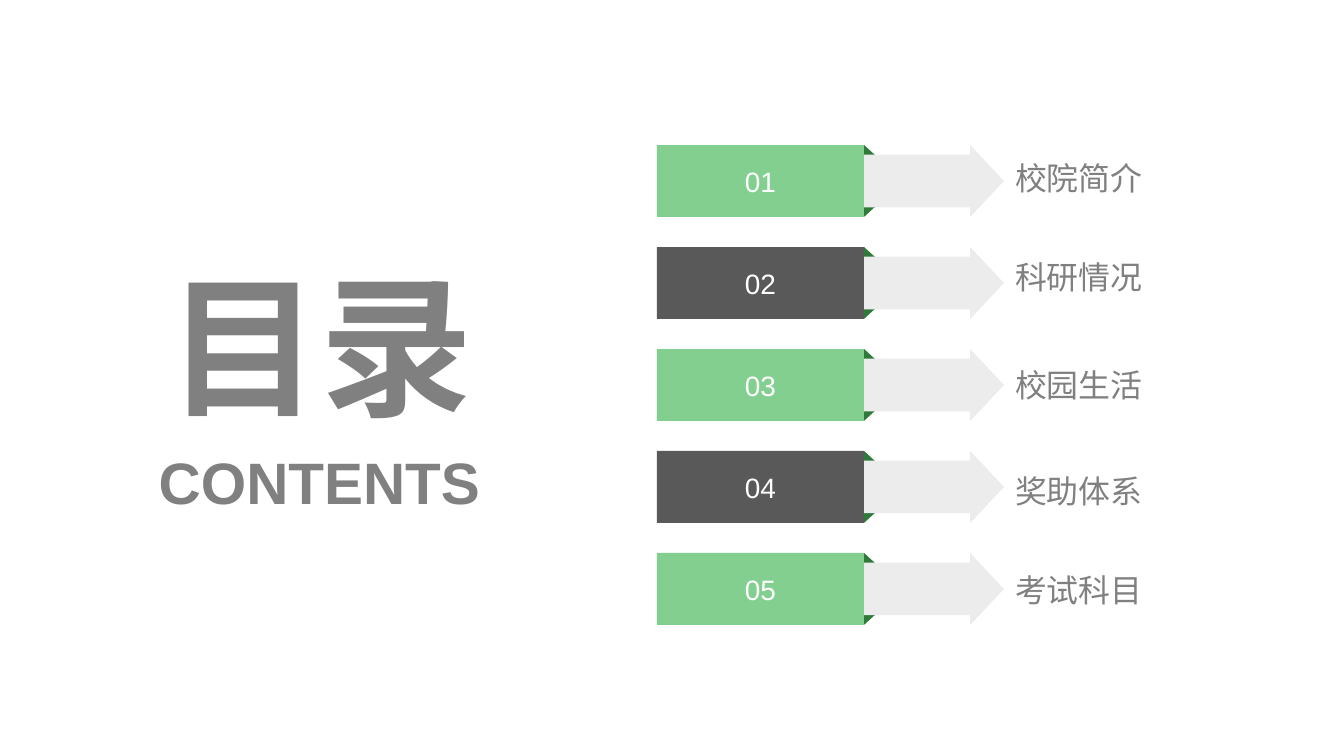
from pptx import Presentation
from pptx.dml.color import RGBColor
from pptx.enum.lang import MSO_LANGUAGE_ID as Lang
from pptx.enum.shapes import MSO_SHAPE as Shape
from pptx.enum.text import MSO_ANCHOR as Anchor, MSO_AUTO_SIZE as Fit, PP_ALIGN as Align
from pptx.oxml.ns import qn
from pptx.util import Pt
from lxml.etree import SubElement

GREEN = RGBColor(0x83, 0xCF, 0x8F)
FOREST = RGBColor(0x2F, 0x7A, 0x3B)
DARK = RGBColor(0x59, 0x59, 0x59)
GREY = RGBColor(0x80, 0x80, 0x80)
PALE = RGBColor(0xEC, 0xEC, 0xEC)
WHITE = RGBColor(0xFF, 0xFF, 0xFF)
FONT = "Arial"

TITLE = "目录"
SUBTITLE = "CONTENTS"
# number, label, top of the label in px
ROWS = [
    ("01", "校院简介", 159),
    ("02", "科研情况", 258),
    ("03", "校园生活", 366),
    ("04", "奖助体系", 472),
    ("05", "考试科目", 571),
]

PX = 9565  # EMU in one px
TOP, STEP, HIGH = 145, 102, 72
BAR_X, BAR_W = 657, 207
FOLD_X, FOLD_W, FOLD_H = BAR_X + BAR_W, 12, 11
ARROW_X, ARROW_W = 772, 232
LABEL_X, LABEL_W, LABEL_H = 1015, 258, 38


def emu(*sizes):
    return [size * PX for size in sizes]


def write(shape, text, size, color, align, anchor=Anchor.MIDDLE, bold=False):
    frame = shape.text_frame
    frame.auto_size = Fit.NONE
    frame.word_wrap = True
    frame.vertical_anchor = anchor
    frame.margin_left = frame.margin_right = 0
    frame.margin_top = frame.margin_bottom = 0
    para = frame.paragraphs[0]
    para.alignment = align
    run = para.add_run()
    run.text = text
    font = run.font
    font.name, font.size, font.bold = FONT, Pt(size), bold
    font.color.rgb = color
    font.language_id = Lang.SIMPLIFIED_CHINESE
    # East Asian glyphs take their font from a separate element
    SubElement(run._r.get_or_add_rPr(), qn("a:ea")).set("typeface", FONT)


def add_solid(slide, kind, box, color):
    shape = slide.shapes.add_shape(kind, *emu(*box))
    shape.shadow.inherit = False
    shape.fill.solid()
    shape.fill.fore_color.rgb = color
    shape.line.fill.background()
    return shape


def add_row(slide, index, number, label, label_y):
    y = TOP + index * STEP
    add_solid(slide, Shape.RIGHT_TRIANGLE, (FOLD_X, y, FOLD_W, FOLD_H), FOREST)
    low = add_solid(slide, Shape.RIGHT_TRIANGLE,
                    (FOLD_X, y + HIGH - FOLD_H, FOLD_W, FOLD_H), FOREST)
    low.element.spPr.get_or_add_xfrm().set("flipV", "1")

    arrow = add_solid(slide, Shape.RIGHT_ARROW, (ARROW_X, y, ARROW_W, HIGH), PALE)
    arrow.adjustments[0] = 0.73
    arrow.adjustments[1] = 0.47

    bar = add_solid(slide, Shape.RECTANGLE, (BAR_X, y, BAR_W, HIGH),
                    DARK if index % 2 else GREEN)
    write(bar, number, 21.1, WHITE, Align.CENTER)

    box = slide.shapes.add_textbox(*emu(LABEL_X, label_y, LABEL_W, LABEL_H))
    write(box, label, 24, GREY, Align.LEFT)


def main():
    deck = Presentation()
    deck.slide_width, deck.slide_height = emu(1344, 756)
    slide = deck.slides.add_slide(deck.slide_layouts[5])

    title = slide.shapes.title
    title.left, title.top, title.width, title.height = emu(159, 251, 322, 185)
    write(title, TITLE, 115, GREY, Align.CENTER, bold=True)

    sub = slide.shapes.add_textbox(*emu(147, 446, 345, 71))
    write(sub, SUBTITLE, 44, GREY, Align.CENTER, Anchor.TOP, bold=True)

    for index, row in enumerate(ROWS):
        add_row(slide, index, *row)
    deck.save("out.pptx")


if __name__ == "__main__":
    main()
